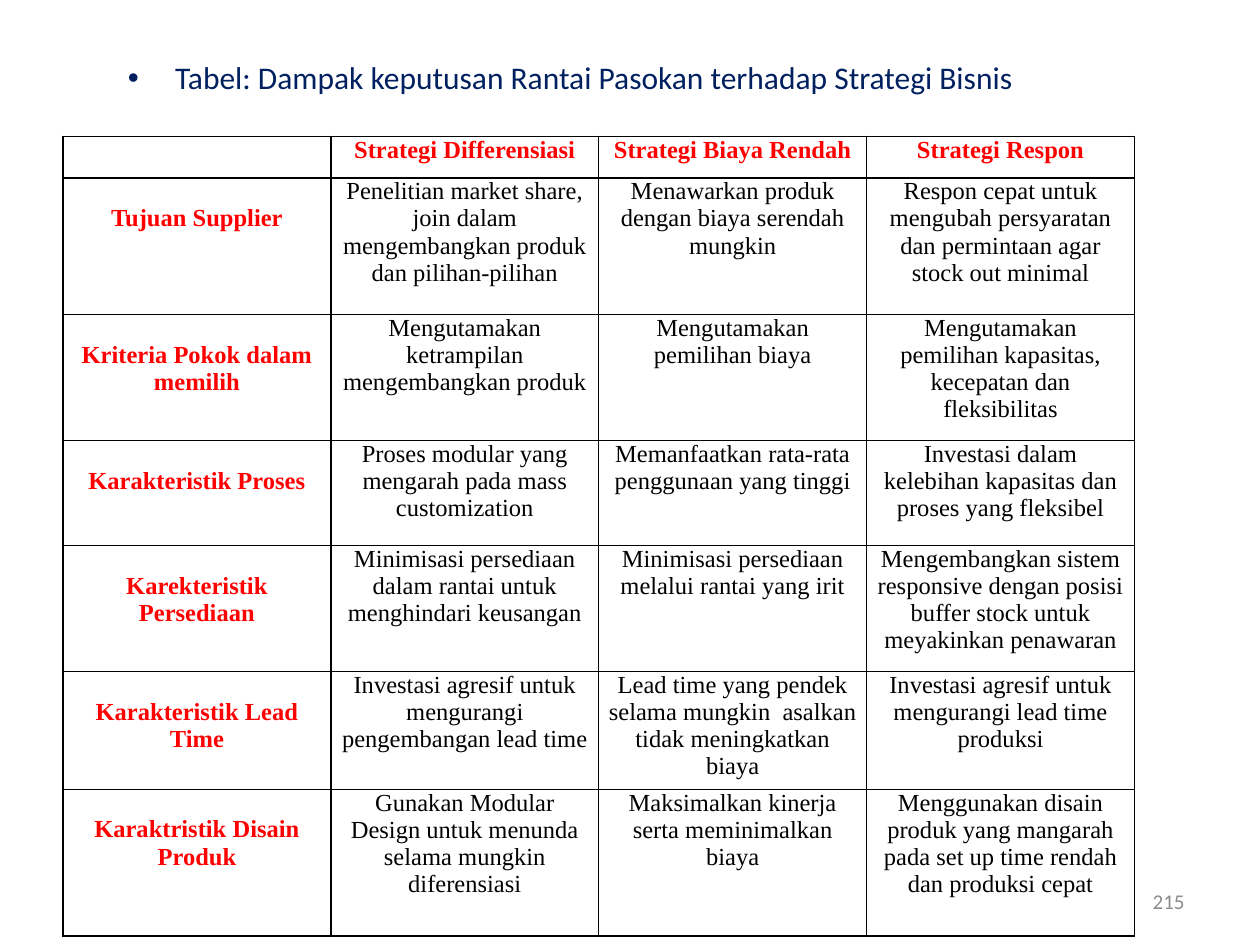
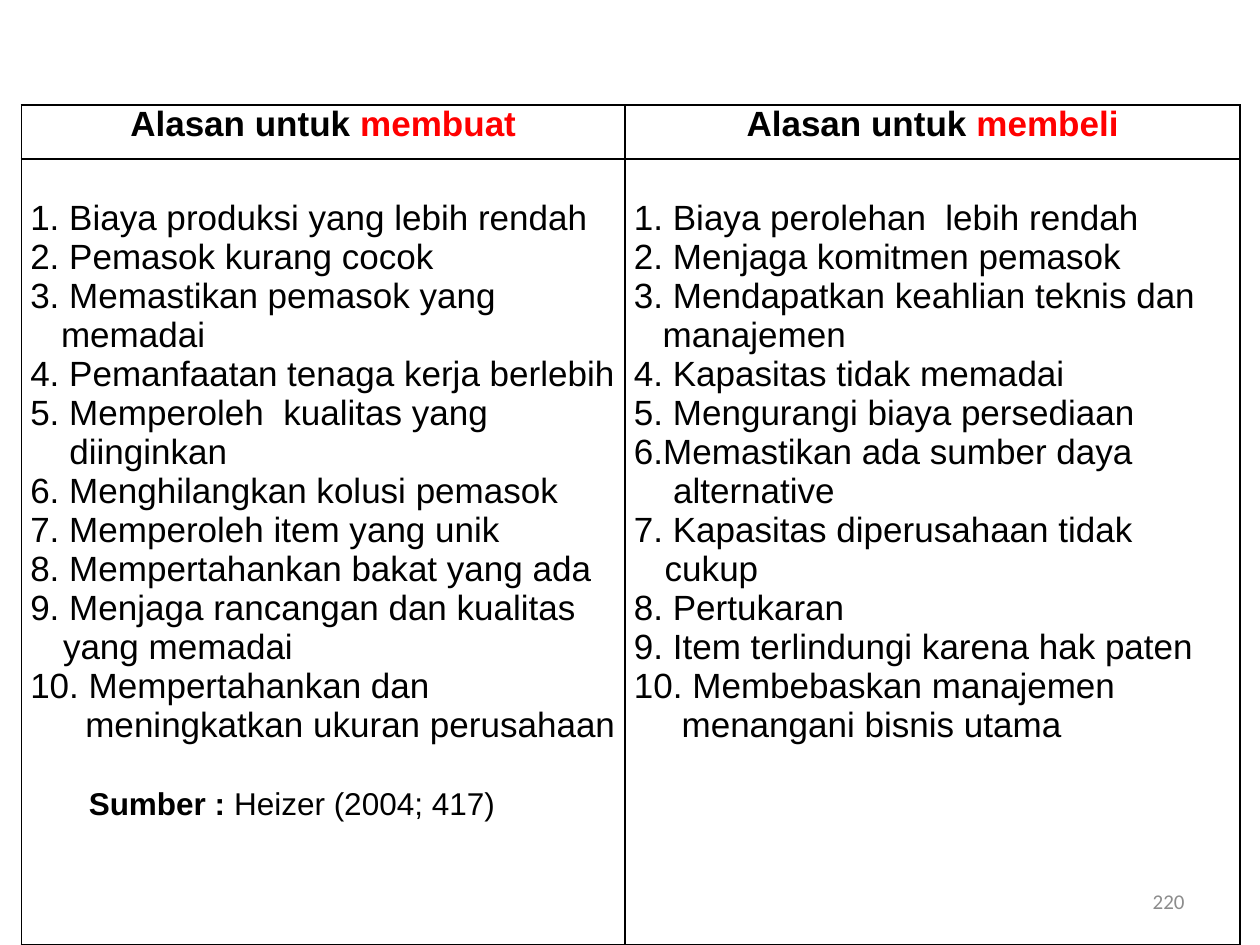
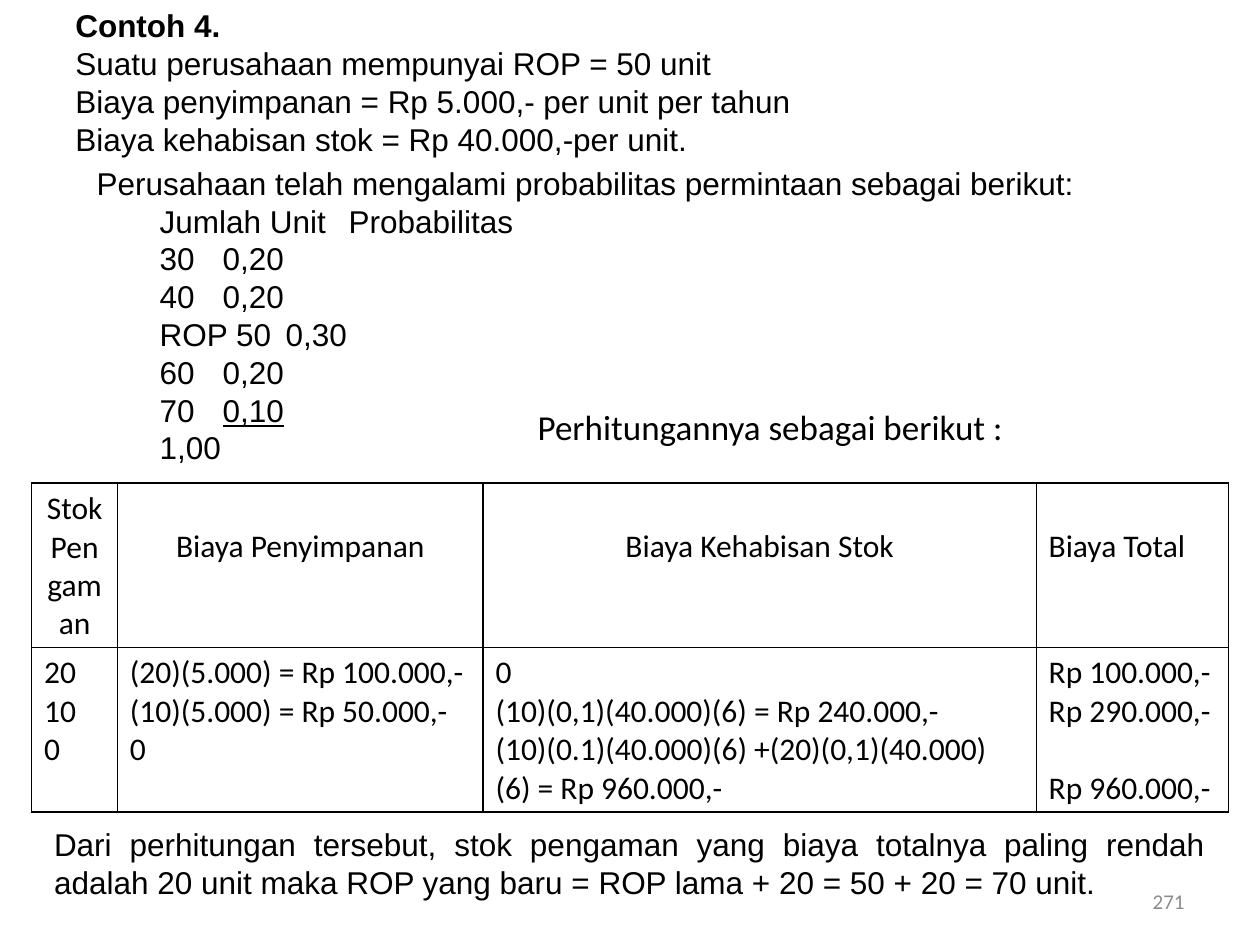
from dataclasses import dataclass

from lxml import etree
from pptx import Presentation
from pptx.dml.color import RGBColor
from pptx.enum.text import MSO_ANCHOR, PP_ALIGN
from pptx.oxml.ns import qn
from pptx.util import Cm, Pt

LEFT, MID, RIGHT, FULL = PP_ALIGN.LEFT, PP_ALIGN.CENTER, PP_ALIGN.RIGHT, PP_ALIGN.JUSTIFY
TOP, CENTRE = MSO_ANCHOR.TOP, MSO_ANCHOR.MIDDLE


@dataclass(frozen=True)
class Theme:
    ink: str = "000000"
    red: str = "FF0000"
    navy: str = "002060"
    grey: str = "8C8C8C"
    sans: str = "Arial"
    soft: str = "Calibri"
    serif: str = "Times New Roman"
    tiny: int = 12
    small: int = 14
    body: int = 18
    large: int = 20
    rule: int = 1


THEME = Theme()


@dataclass(frozen=True)
class Face:
    font: str
    size: int
    ink: str = THEME.ink


@dataclass(frozen=True)
class Run:
    text: str
    bold: bool = False
    ink: str | None = None
    size: int | None = None
    under: bool = False


@dataclass(frozen=True)
class Para:
    runs: tuple[Run, ...]
    align: PP_ALIGN = LEFT
    left: float = 0
    hang: float = 0
    before: float = 0
    stops: tuple[float, ...] = ()
    dot: bool = False


@dataclass(frozen=True)
class Box:
    left: float
    top: float
    width: float
    height: float


@dataclass(frozen=True)
class Cell:
    paras: tuple[Para, ...] = ()
    drop: float = 0


@dataclass(frozen=True)
class Grid:
    left: float
    top: float
    cols: tuple[float, ...]
    rows: tuple[float, ...]
    side: float
    edge: float
    face: Face


TITLE = Face(THEME.soft, THEME.body, THEME.navy)
PAGE = Face(THEME.soft, THEME.tiny, THEME.grey)
PROSE = Face(THEME.sans, THEME.body)
LEAD = Face(THEME.soft, THEME.large)


def line(text: str, align: PP_ALIGN = LEFT, hang: float = 0, before: float = 0) -> Para:
    return Para((Run(text),), align, hang, hang, before)


def head(text: str) -> Para:
    return Para((Run(text, True, THEME.red),), MID)


def write(frame, paras: tuple[Para, ...], face: Face) -> None:
    for rank, para in enumerate(paras):
        item = frame.paragraphs[0] if rank == 0 else frame.add_paragraph()
        item.alignment = para.align
        props = item._p.get_or_add_pPr()
        props.set("marL", str(Cm(para.left)))
        props.set("indent", str(-Cm(para.hang)))
        if para.before:
            item.space_before = Pt(para.before)
        if para.dot:
            etree.SubElement(props, qn("a:buFont"), typeface="Arial")
            etree.SubElement(props, qn("a:buChar"), char="•")
        if para.stops:
            tabs = etree.SubElement(props, qn("a:tabLst"))
            for stop in para.stops:
                etree.SubElement(tabs, qn("a:tab"), pos=str(Cm(stop)), algn="l")
        for part in para.runs:
            run = item.add_run()
            run.text = part.text
            font = run.font
            font.name = face.font
            font.size = Pt(part.size or face.size)
            font.bold = part.bold
            font.underline = part.under
            font.color.rgb = RGBColor.from_string(part.ink or face.ink)


def label(slide, box: Box, paras: tuple[Para, ...], face: Face, anchor: MSO_ANCHOR = TOP) -> None:
    shape = slide.shapes.add_textbox(Cm(box.left), Cm(box.top), Cm(box.width), Cm(box.height))
    frame = shape.text_frame
    frame.word_wrap = True
    frame.vertical_anchor = anchor
    write(frame, paras, face)


def frame_cell(cell) -> None:
    props = cell._tc.get_or_add_tcPr()
    for side in ("lnL", "lnR", "lnT", "lnB"):
        edge = etree.SubElement(props, qn(f"a:{side}"), w=str(Pt(THEME.rule)))
        fill = etree.SubElement(edge, qn("a:solidFill"))
        etree.SubElement(fill, qn("a:srgbClr"), val=THEME.ink)
    cell.fill.background()


def draw_grid(slide, grid: Grid, cells: list[list[Cell]]) -> None:
    shape = slide.shapes.add_table(
        len(grid.rows), len(grid.cols), Cm(grid.left), Cm(grid.top),
        Cm(sum(grid.cols)), Cm(sum(grid.rows)))
    table = shape.table
    table.first_row = table.horz_banding = False
    for col, width in zip(table.columns, grid.cols):
        col.width = Cm(width)
    for row, height, items in zip(table.rows, grid.rows, cells):
        row.height = Cm(height)
        for cell, item in zip(row.cells, items):
            frame_cell(cell)
            cell.margin_left = cell.margin_right = Cm(grid.side)
            cell.margin_top = Cm(grid.edge + item.drop)
            cell.margin_bottom = Cm(grid.edge)
            write(cell.text_frame, item.paras, grid.face)


def add_page(deck, number: int):
    slide = deck.slides.add_slide(deck.slide_layouts[6])
    label(slide, Box(18.2, 17.65, 5.93, 1.02), (line(str(number), RIGHT),), PAGE, CENTRE)
    return slide


PLANS = ("Strategi Differensiasi", "Strategi Biaya Rendah", "Strategi Respon")
IMPACT = (
    ("Tujuan Supplier",
     "Penelitian market share, join dalam mengembangkan produk dan pilihan-pilihan",
     "Menawarkan produk dengan biaya serendah mungkin",
     "Respon cepat untuk mengubah persyaratan dan permintaan agar stock out minimal"),
    ("Kriteria Pokok dalam memilih",
     "Mengutamakan ketrampilan mengembangkan produk",
     "Mengutamakan pemilihan biaya",
     "Mengutamakan pemilihan kapasitas, kecepatan dan fleksibilitas"),
    ("Karakteristik Proses",
     "Proses modular yang mengarah pada mass customization",
     "Memanfaatkan rata-rata penggunaan yang tinggi",
     "Investasi dalam kelebihan kapasitas dan proses yang fleksibel"),
    ("Karekteristik Persediaan",
     "Minimisasi persediaan dalam rantai untuk menghindari keusangan",
     "Minimisasi persediaan melalui rantai yang irit",
     "Mengembangkan sistem responsive dengan posisi buffer stock untuk meyakinkan penawaran"),
    ("Karakteristik Lead Time",
     "Investasi agresif untuk mengurangi pengembangan lead time",
     "Lead time yang pendek selama mungkin  asalkan tidak meningkatkan biaya",
     "Investasi agresif untuk mengurangi lead time produksi"),
    ("Karaktristik Disain Produk",
     "Gunakan Modular Design untuk menunda selama mungkin diferensiasi",
     "Maksimalkan kinerja serta meminimalkan biaya",
     "Menggunakan disain produk yang mangarah pada set up time rendah dan produksi cepat"),
)


def add_impact(deck) -> None:
    slide = add_page(deck, 215)
    title = Run("Tabel: Dampak keputusan Rantai Pasokan terhadap Strategi Bisnis")
    label(slide, Box(2.33, 1.05, 19.05, 1.02),
          (Para((title,), left=0.95, hang=0.95, dot=True),), TITLE)
    cells = [[Cell()] + [Cell((head(plan),)) for plan in PLANS]]
    for name, *notes in IMPACT:
        cells.append([Cell((head(name),), 0.54)] + [Cell((line(note, MID),)) for note in notes])
    grid = Grid(1.27, 2.75, (5.4,) * 4, (0.84, 2.75, 2.54, 2.12, 2.54, 2.12, 2.96),
                0.15, 0, Face(THEME.serif, THEME.small))
    draw_grid(slide, grid, cells)


MAKE = (
    ("1. Biaya produksi yang lebih rendah", 0),
    ("2. Pemasok kurang cocok", 0),
    ("3. Memastikan pemasok yang memadai", 0.62),
    ("4. Pemanfaatan tenaga kerja berlebih", 0.79),
    ("5. Memperoleh  kualitas yang diinginkan", 0.79),
    ("6. Menghilangkan kolusi pemasok", 0),
    ("7. Memperoleh item yang unik", 0),
    ("8. Mempertahankan bakat yang ada", 0),
    ("9. Menjaga rancangan dan kualitas yang memadai", 0.66),
    ("10. Mempertahankan dan meningkatkan ukuran perusahaan", 1.11),
)
BUY = (
    ("1. Biaya perolehan  lebih rendah", 0),
    ("2. Menjaga komitmen pemasok", 0),
    ("3. Mendapatkan keahlian teknis dan manajemen", 0.58),
    ("4. Kapasitas tidak memadai", 0),
    ("5. Mengurangi biaya persediaan", 0),
    ("6.Memastikan ada sumber daya alternative", 0.79),
    ("7. Kapasitas diperusahaan tidak cukup", 0.62),
    ("8. Pertukaran", 0),
    ("9. Item terlindungi karena hak paten", 0),
    ("10. Membebaskan manajemen menangani bisnis utama", 0.96),
)


def add_choice(deck) -> None:
    slide = add_page(deck, 220)
    heads = [Cell((Para((Run("Alasan untuk ", True), Run(word, True, THEME.red)), MID),))
             for word in ("membuat", "membeli")]
    make, buy = (tuple(line(text, hang=hang) for text, hang in group) for group in (MAKE, BUY))
    source = Para((Run("Sumber : ", True, size=THEME.body),
                   Run("Heizer (2004; 417)", size=THEME.body)), left=1.18, before=24)
    grid = Grid(0.43, 2.12, (12.17, 12.4), (1.09, 15.84), 0.18, 0,
                Face(THEME.sans, THEME.large))
    draw_grid(slide, grid, [heads, [Cell(make + (source,), 0.79), Cell(buy, 0.79)]])


ODDS = (
    ("Jumlah Unit", "Probabilitas", 0.18),
    ("30", "0,20", 2.54),
    ("40", "0,20", 2.54),
    ("ROP 50", "0,30", 1.06),
    ("60", "0,20", 2.54),
)
FACTS = (
    "Suatu perusahaan mempunyai ROP = 50 unit",
    "Biaya penyimpanan = Rp 5.000,- per unit per tahun",
    "Biaya kehabisan stok = Rp 40.000,-per unit.",
)
COSTS = (
    ("20", "10", "0"),
    ("(20)(5.000) = Rp 100.000,-", "(10)(5.000) = Rp 50.000,-", "0"),
    ("0", "(10)(0,1)(40.000)(6) = Rp 240.000,-",
     "(10)(0.1)(40.000)(6) +(20)(0,1)(40.000) (6) = Rp 960.000,-"),
)


def add_stock(deck) -> None:
    slide = add_page(deck, 271)
    near, far, end = 2.54, 5.08, 6.83
    odds = [line("Perusahaan telah mengalami probabilitas permintaan sebagai berikut:")]
    odds += [Para((Run(f"\t{unit}\t{odd}"),), stops=(stop, far)) for unit, odd, stop in ODDS]
    odds.append(Para((Run("\t70\t"), Run("0,10\t", under=True)), stops=(near, far, end)))
    odds.append(Para((Run("\t1,00"),), stops=(far,)))
    label(slide, Box(1.7, 3.18, 22.43, 6.35), tuple(odds), PROSE)

    facts = (Para((Run("Contoh 4.", True),)),) + tuple(line(fact) for fact in FACTS)
    label(slide, Box(1.27, 0, 16.94, 3.3), facts, PROSE)
    label(slide, Box(10.59, 8.05, 9.96, 1.09),
          (line("Perhitungannya sebagai berikut :"),), LEAD, CENTRE)

    drop = 0.77
    heads = [Cell((line("Stok Pengaman", MID),)),
             Cell((line("Biaya Penyimpanan", MID),), drop),
             Cell((line("Biaya Kehabisan Stok", MID),), drop),
             Cell((line("Biaya Total", FULL),), drop)]
    costs = [Cell(tuple(line(text) for text in group)) for group in COSTS]
    total = Cell((line("Rp 100.000,-"), line("Rp 290.000,-"), line("Rp 960.000,-", before=22)))
    grid = Grid(0.64, 9.74, (1.73, 7.37, 11.15, 3.88), (3.3, 3.3), 0.25, 0.13,
                Face(THEME.soft, THEME.body))
    draw_grid(slide, grid, [heads, costs + [total]])

    label(slide, Box(0.84, 16.51, 23.7, 1.78),
          (line("Dari perhitungan tersebut, stok pengaman yang biaya totalnya paling rendah "
                "adalah 20 unit maka ROP yang baru = ROP lama + 20 = 50 + 20 = 70 unit.", FULL),),
          PROSE, CENTRE)


def main() -> None:
    deck = Presentation()
    deck.slide_width, deck.slide_height = Cm(25.4), Cm(19.05)
    add_impact(deck)
    add_choice(deck)
    add_stock(deck)
    deck.save("out.pptx")


if __name__ == "__main__":
    main()
